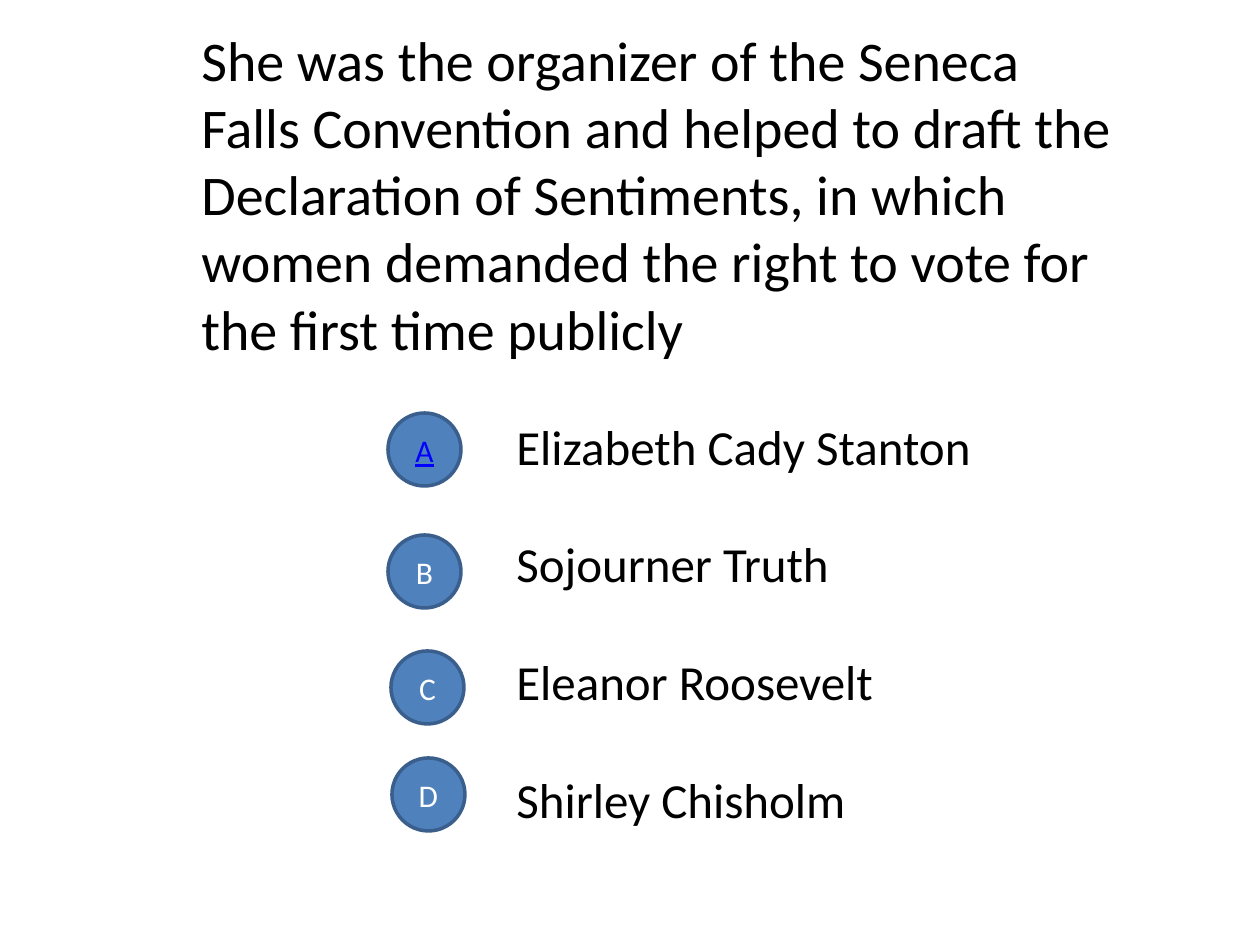
from dataclasses import dataclass

from pptx import Presentation
from pptx.dml.color import RGBColor
from pptx.enum.shapes import MSO_SHAPE
from pptx.enum.text import MSO_ANCHOR, PP_ALIGN
from pptx.util import Pt

OVAL = MSO_SHAPE.OVAL
MIDDLE = MSO_ANCHOR.MIDDLE
CENTER = PP_ALIGN.CENTER

QUESTION = (
    "She was the organizer of the Seneca Falls Convention and helped to draft "
    "the Declaration of Sentiments, in which women demanded the right to vote "
    "for the first time publicly"
)
ANSWERS = [
    "Elizabeth Cady Stanton",
    "Sojourner Truth",
    "Eleanor Roosevelt",
    "Shirley Chisholm",
]
BADGES = [
    ("A", 388, 413),
    ("B", 388, 535),
    ("C", 391, 651),
    ("D", 392, 758),
]
CORRECT = "A"

SLIDE_SIZE = (1260, 945)
QUESTION_BOX = (189, 19, 945, 352)
ANSWERS_BOX = (504, 410, 630, 428)
BADGE_SIZE = 73


@dataclass(frozen=True)
class Theme:
    font: str = "Calibri"
    text: str = "000000"
    fill: str = "4F81BD"
    outline: str = "3A5F8C"
    letter: str = "FFFFFF"
    link: str = "0000FF"
    question_size: int = 32
    answer_size: int = 28
    letter_size: int = 18
    answer_gap: float = 33.6
    outline_width: int = 2


THEME = Theme()


def px(value):
    return round(value * 914400 / 126)


def style(paragraph, size, color):
    for run in paragraph.runs:
        run.font.name = THEME.font
        run.font.size = Pt(size)
        run.font.color.rgb = RGBColor.from_string(color)


def add_text(slide, box, lines, size, gap=0):
    frame = slide.shapes.add_textbox(*map(px, box)).text_frame
    frame.word_wrap = True
    frame.text = "\n".join(lines)
    for index, paragraph in enumerate(frame.paragraphs):
        style(paragraph, size, THEME.text)
        if index:
            paragraph.space_before = Pt(gap)


def add_badge(slide, letter, left, top):
    badge = slide.shapes.add_shape(
        OVAL, *map(px, (left, top, BADGE_SIZE, BADGE_SIZE))
    )
    badge.shadow.inherit = False
    badge.fill.solid()
    badge.fill.fore_color.rgb = RGBColor.from_string(THEME.fill)
    badge.line.color.rgb = RGBColor.from_string(THEME.outline)
    badge.line.width = Pt(THEME.outline_width)
    badge.text_frame.text = letter
    badge.text_frame.vertical_anchor = MIDDLE
    label = badge.text_frame.paragraphs[0]
    label.alignment = CENTER
    is_correct = letter == CORRECT
    style(label, THEME.letter_size, THEME.link if is_correct else THEME.letter)
    label.runs[0].font.underline = is_correct


def main():
    deck = Presentation()
    deck.slide_width, deck.slide_height = map(px, SLIDE_SIZE)
    slide = deck.slides.add_slide(deck.slide_layouts[6])
    add_text(slide, QUESTION_BOX, [QUESTION], THEME.question_size)
    add_text(slide, ANSWERS_BOX, ANSWERS, THEME.answer_size, THEME.answer_gap)
    for letter, left, top in BADGES:
        add_badge(slide, letter, left, top)
    deck.save("out.pptx")


if __name__ == "__main__":
    main()
